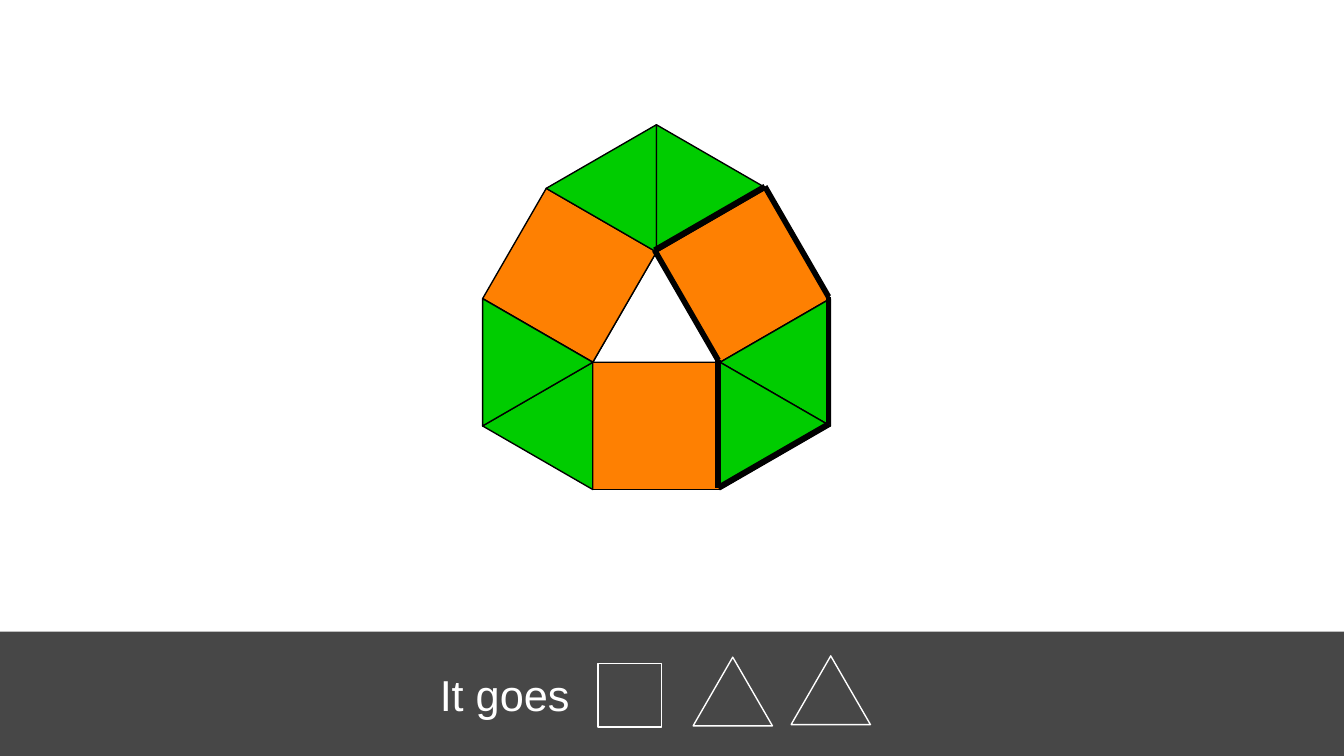
import math
from dataclasses import dataclass

from lxml import etree
from pptx import Presentation
from pptx.dml.color import RGBColor
from pptx.enum import shapes, text
from pptx.oxml import ns
from pptx.util import Pt


@dataclass(frozen=True)
class Theme:
    black: str = "000000"
    white: str = "FFFFFF"
    orange: str = "FE8002"
    green: str = "00CC00"
    font: str = "Arial"
    title_size: float = 23.2
    thin: float = 0.75
    thick: float = 3
    bar_opacity: int = 72


THEME = Theme()
SQUARE = shapes.MSO_SHAPE.RECTANGLE
TRIANGLE = shapes.MSO_SHAPE.ISOSCELES_TRIANGLE

# Ring geometry in points: a triangular hole with squares and fans around it
SIDE = 68.2
HEIGHT = SIDE * math.sqrt(3) / 2
RADIUS = SIDE / math.sqrt(3)
CENTRE = (351.7, 174.4)


def set_values(target, values):
    for name, value in values.items():
        setattr(target, name, value)


def move(point, distance, degrees):
    """Return the point at a distance; angles run clockwise from the right."""
    angle = math.radians(degrees)
    return (point[0] + distance * math.cos(angle),
            point[1] + distance * math.sin(angle))


def add_figure(slide, kind, box, fill=None, line=None, rotation=0):
    shape = slide.shapes.add_shape(kind, *map(Pt, box))
    shape.shadow.inherit = False
    shape.rotation = rotation
    if fill:
        shape.fill.solid()
        shape.fill.fore_color.rgb = RGBColor.from_string(fill)
    else:
        shape.fill.background()
    if line:
        shape.line.color.rgb = RGBColor.from_string(line)
        shape.line.width = Pt(THEME.thin)
    else:
        shape.line.fill.background()
    return shape


def add_square(slide, centre, rotation):
    box = (centre[0] - SIDE / 2, centre[1] - SIDE / 2, SIDE, SIDE)
    add_figure(slide, SQUARE, box, THEME.orange, THEME.black, rotation)


def add_triangle(slide, centroid, rotation, fill):
    # The box centre lies a sixth of the height above the centroid
    x, y = move(centroid, HEIGHT / 6, rotation - 90)
    box = (x - SIDE / 2, y - HEIGHT / 2, SIDE, HEIGHT)
    add_figure(slide, TRIANGLE, box, fill, THEME.black, rotation)


def add_edge(group, start, end):
    edge = group.shapes.add_connector(
        shapes.MSO_CONNECTOR.STRAIGHT, *map(Pt, start + end))
    edge.line.color.rgb = RGBColor.from_string(THEME.black)
    edge.line.width = Pt(THEME.thick)
    etree.SubElement(edge._element.spPr, ns.qn("a:effectLst"))


def add_bar(slide):
    bar = add_figure(slide, SQUARE, (0, 338.4, 720, 67.6), THEME.black)
    color = bar._element.spPr.find(".//" + ns.qn("a:srgbClr"))
    alpha = etree.SubElement(color, ns.qn("a:alpha"))
    alpha.set("val", str(THEME.bar_opacity * 1000))
    # Place the bar behind the title
    slide.shapes.title._element.addprevious(bar._element)


def add_title(slide, words):
    title = slide.shapes.title
    set_values(title, dict(left=Pt(228.4), top=Pt(350.6),
                           width=Pt(102), height=Pt(42.5)))
    set_values(title.text_frame, dict(
        text=words, word_wrap=True, auto_size=text.MSO_AUTO_SIZE.NONE,
        vertical_anchor=text.MSO_ANCHOR.MIDDLE,
        margin_left=Pt(7.2), margin_right=Pt(7.2),
        margin_top=Pt(3.6), margin_bottom=Pt(3.6)))
    paragraph = title.text_frame.paragraphs[0]
    paragraph.alignment = text.PP_ALIGN.LEFT
    font = paragraph.runs[0].font
    set_values(font, dict(name=THEME.font, size=Pt(THEME.title_size)))
    font.color.rgb = RGBColor.from_string(THEME.white)


def add_pattern_icons(slide):
    icons = [(SQUARE, (320.4, 355.5, 34, 34)),
             (TRIANGLE, (371.3, 352.1, 42.5, 36.8)),
             (TRIANGLE, (423.8, 351.4, 42.5, 36.8))]
    for kind, box in icons:
        add_figure(slide, kind, box, line=THEME.white)


def add_ring(slide):
    add_triangle(slide, CENTRE, 0, THEME.white)
    # One square on each side of the hole
    for direction, rotation in ((-30, 330), (90, 0), (210, 30)):
        centre = move(CENTRE, RADIUS / 2 + SIDE / 2, direction)
        add_square(slide, centre, rotation)
    # Two triangles fan out from each corner of the hole
    for direction, rotations in ((150, (30, 210)), (-90, (30, 330)),
                                 (30, (30, 330))):
        corner = move(CENTRE, RADIUS, direction)
        for turn, rotation in zip((-30, 30), rotations):
            centroid = move(corner, RADIUS, direction + turn)
            add_triangle(slide, centroid, rotation, THEME.green)


def add_unit_outline(slide):
    """Outline one repeating unit: a square and two triangles."""
    centre = (CENTRE[0] - 1, CENTRE[1] - 1)
    top = move(centre, RADIUS, -90)
    right = move(centre, RADIUS, 30)
    square_top = move(top, SIDE, -30)
    fan_top, fan_middle, fan_end = (
        move(right, SIDE, angle) for angle in (-30, 30, 90))
    group = slide.shapes.add_group_shape()
    for start, end in ((top, square_top), (square_top, fan_top),
                       (top, right), (fan_end, fan_middle),
                       (fan_top, fan_middle), (right, fan_end)):
        add_edge(group, start, end)


def main():
    presentation = Presentation()
    set_values(presentation, dict(slide_width=Pt(720), slide_height=Pt(405)))
    slide = presentation.slides.add_slide(presentation.slide_layouts[5])

    # Caption strip
    add_bar(slide)
    add_title(slide, "It goes")
    add_pattern_icons(slide)

    # Ring of tiles with one unit marked
    add_ring(slide)
    add_unit_outline(slide)
    presentation.save("out.pptx")


if __name__ == "__main__":
    main()
